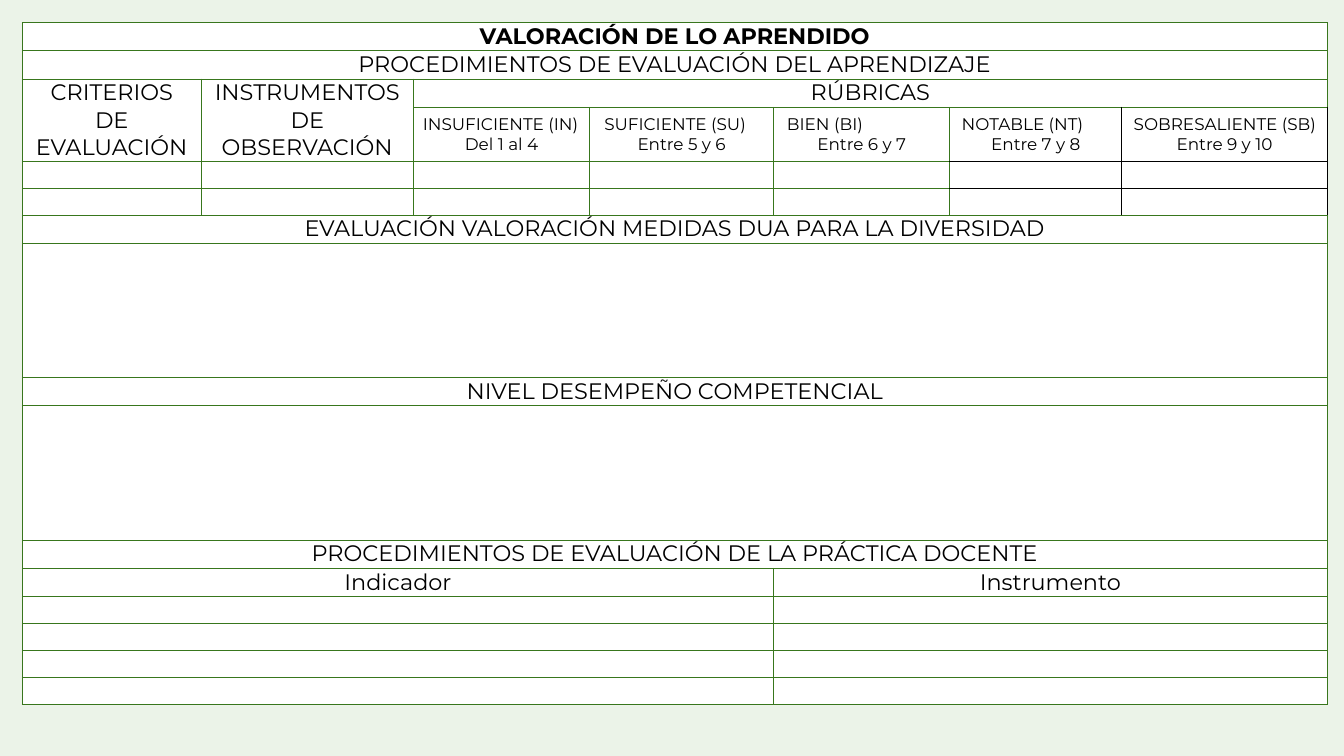
from dataclasses import dataclass
from lxml.etree import SubElement
from pptx import Presentation
from pptx.dml.color import RGBColor
from pptx.enum.text import MSO_ANCHOR, PP_ALIGN
from pptx.oxml import parse_xml
from pptx.oxml.ns import nsdecls
from pptx.util import Inches, Pt


@dataclass
class Theme:
    back: str = "EBF3E8"
    cell: str = "FFFFFF"
    ink: str = "000000"
    line: str = "38761D"
    font: str = "Montserrat"
    head: float = 12
    small: float = 9
    blank: float = 8
    rule: float = 0.5


THIN, BLANK, TALL = 0.21, 0.2, 1.0
COLS = [1.33, 1.58, 1.31, 1.37, 1.31, 1.28, 1.53]
ROWS = ([THIN] * 3 + [0.39] + [BLANK] * 2 + [THIN, TALL] * 2
        + [THIN] * 2 + [BLANK] * 4)
BANDS = {
    0: "VALORACIÓN DE LO APRENDIDO",
    1: "PROCEDIMIENTOS DE EVALUACIÓN DEL APRENDIZAJE",
    6: "EVALUACIÓN VALORACIÓN MEDIDAS DUA PARA LA DIVERSIDAD",
    7: "",
    8: "NIVEL DESEMPEÑO COMPETENCIAL",
    9: "",
    10: "PROCEDIMIENTOS DE EVALUACIÓN DE LA PRÁCTICA DOCENTE",
}
HEADS = ["CRITERIOS DE EVALUACIÓN", "INSTRUMENTOS DE OBSERVACIÓN"]
# grade, range of marks, indent of the grade in inches
GRADES = [
    ("INSUFICIENTE (IN)", "Del 1 al 4", 0),
    ("SUFICIENTE (SU)", "Entre 5 y 6", 0.04),
    ("BIEN (BI)", "Entre 6 y 7", 0.03),
    ("NOTABLE (NT)", "Entre 7 y 8", 0.02),
    ("SOBRESALIENTE (SB)", "Entre 9 y 10", 0.02),
]


def write(para, text, *, font, size, color, bold=False,
          align=PP_ALIGN.CENTER, indent=0):
    para.alignment = align
    if indent:
        para._p.get_or_add_pPr().set("marL", str(Inches(indent)))
    run = para.add_run()
    run.text = text
    face = run.font
    face.name, face.size, face.bold = font, Pt(size), bold
    face.color.rgb = RGBColor.from_string(color)


class Deck:
    def __init__(self, theme, wide, high):
        self.theme = theme
        self.file = Presentation()
        self.file.slide_width = Inches(wide)
        self.file.slide_height = Inches(high)
        self.slide = self.file.slides.add_slide(self.file.slide_layouts[6])
        fill = self.slide.background.fill
        fill.solid()
        fill.fore_color.rgb = RGBColor.from_string(theme.back)

    def grid(self, left, top, cols, rows):
        """Add a ruled blank table; left and top are shares of the slide."""
        frame = self.slide.shapes.add_table(
            len(rows), len(cols),
            int(self.file.slide_width * left),
            int(self.file.slide_height * top),
            Inches(sum(cols)), Inches(sum(rows)))
        self.table = frame.table
        for col, size in zip(self.table.columns, cols):
            col.width = Inches(size)
        for row, size in zip(self.table.rows, rows):
            row.height = Inches(size)
        for r in range(len(rows)):
            for c in range(len(cols)):
                self.clear(self.table.cell(r, c))
                self.edge(r, c)

    def clear(self, cell):
        cell.fill.solid()
        cell.fill.fore_color.rgb = RGBColor.from_string(self.theme.cell)
        cell.margin_left = cell.margin_right = Inches(0.07)
        cell.margin_top = cell.margin_bottom = 0
        end = cell.text_frame.paragraphs[0]._p.get_or_add_endParaRPr()
        end.set("sz", str(int(self.theme.blank * 100)))

    def edge(self, r, c):
        """Rule a cell in green, with black inside the two top grades."""
        dark = 3 <= r <= 5 and c >= 5
        sides = {"L": dark and c == 6, "R": dark,
                 "T": dark and r > 3, "B": dark and r < 5}
        props = self.table.cell(r, c)._tc.get_or_add_tcPr()
        for spot, (side, black) in enumerate(sides.items()):
            line = parse_xml(f'<a:ln{side} {nsdecls("a")}/>')
            line.set("w", str(Pt(self.theme.rule)))
            space = "{%s}" % line.nsmap["a"]
            fill = SubElement(line, space + "solidFill")
            tone = self.theme.ink if black else self.theme.line
            SubElement(fill, space + "srgbClr").set("val", tone)
            props.insert(spot, line)

    def cell(self, r, c, *lines, tall=1, wide=1, size=None, mid=False,
             bold=False, indent=None):
        """Merge a block of cells and fill it; indent sets line one left."""
        cell = self.table.cell(r, c)
        if tall * wide > 1:
            cell.merge(self.table.cell(r + tall - 1, c + wide - 1))
        if mid:
            cell.vertical_anchor = MSO_ANCHOR.MIDDLE
        frame = cell.text_frame
        for n, text in enumerate(filter(None, lines)):
            para = frame.add_paragraph() if n else frame.paragraphs[0]
            left = n == 0 and indent is not None
            write(para, text, font=self.theme.font, bold=bold,
                  size=size or self.theme.head, color=self.theme.ink,
                  align=PP_ALIGN.LEFT if left else PP_ALIGN.CENTER,
                  indent=indent if left else 0)


def main():
    theme = Theme()
    wide = 10
    deck = Deck(theme, wide, wide * 9 / 16)
    deck.grid(1 / 60, 0.03, COLS, ROWS)
    for row, text in BANDS.items():
        deck.cell(row, 0, text, wide=len(COLS), bold=row == 0)
    for col, text in enumerate(HEADS):
        deck.cell(2, col, text, tall=2, mid=True)
    deck.cell(2, 2, "RÚBRICAS", wide=len(GRADES))
    for col, (grade, marks, indent) in enumerate(GRADES, 2):
        deck.cell(3, col, grade, marks, size=theme.small, mid=True,
                  indent=indent)
    for row in range(11, len(ROWS)):
        pair = ("Indicador", "Instrumento") if row == 11 else ("", "")
        deck.cell(row, 0, pair[0], wide=4)
        deck.cell(row, 4, pair[1], wide=3)
    deck.file.save("out.pptx")


if __name__ == "__main__":
    main()
